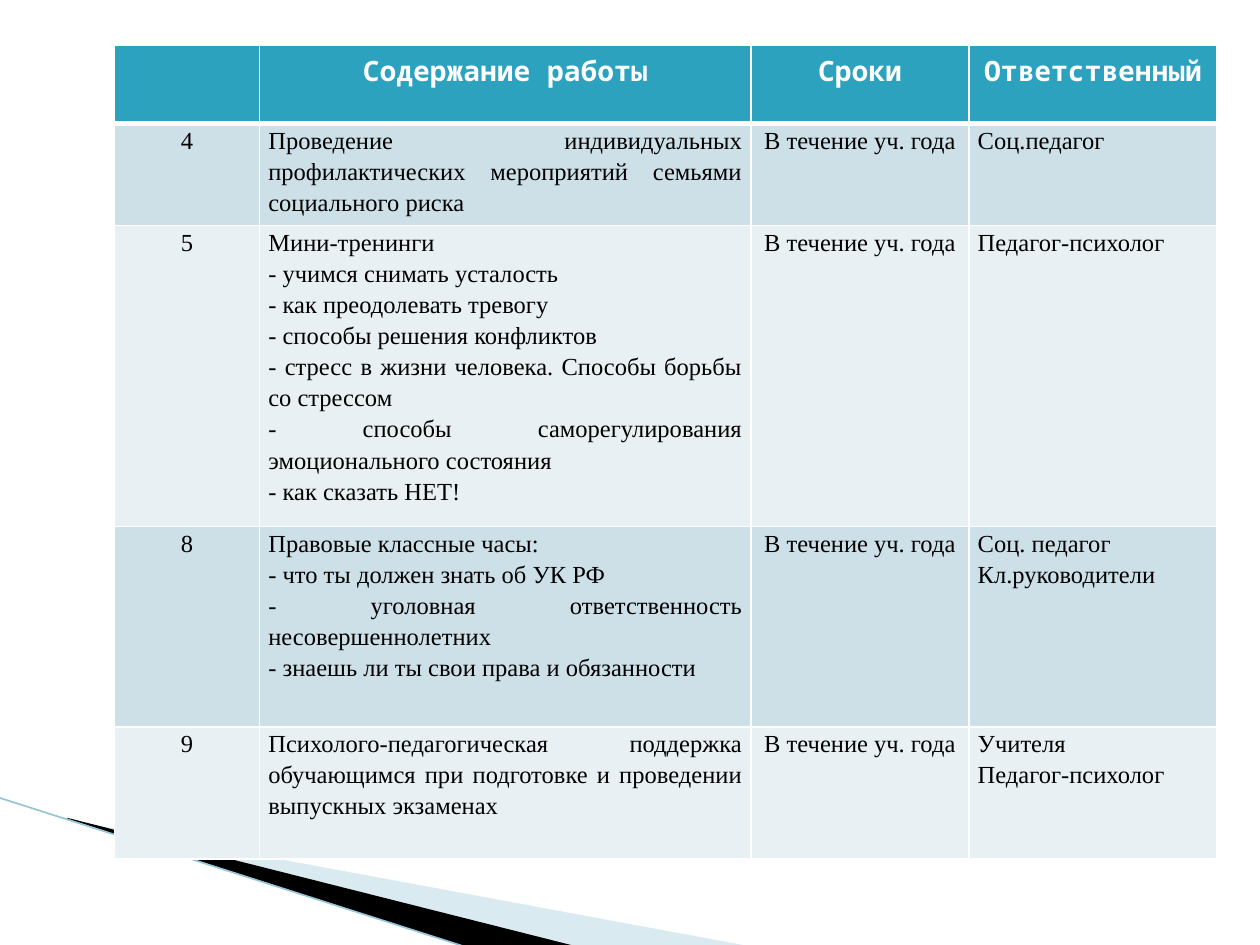
from dataclasses import dataclass

from lxml import etree
from pptx import Presentation
from pptx import util as u
from pptx.dml.color import RGBColor
from pptx.enum import shapes, text
from pptx.oxml import ns

WHITE = RGBColor(0xFF, 0xFF, 0xFF)
BLACK = RGBColor(0, 0, 0)
TEAL = RGBColor(0x2D, 0xA2, 0xBF)
BAND_DARK = RGBColor(0xCD, 0xE0, 0xE8)
BAND_LIGHT = RGBColor(0xE8, 0xF0, 0xF4)
WEDGE_BLUE = RGBColor(0xA0, 0xCB, 0xDC)
EDGE_BLUE = RGBColor(0x97, 0xC5, 0xD8)

CENTER = text.PP_ALIGN.CENTER
JUSTIFY = text.PP_ALIGN.JUSTIFY
LEFT = text.PP_ALIGN.LEFT


@dataclass(frozen=True)
class Wedge:
    points: tuple[tuple[float, float], ...]
    color: RGBColor
    opacity: int = 100


@dataclass(frozen=True)
class Activity:
    number: str
    content: tuple[str, ...]
    responsible: tuple[str, ...]
    height: float
    period: str = "В течение уч. года"


@dataclass(frozen=True)
class CellStyle:
    font: str
    size: int
    color: RGBColor
    bold: bool
    spacing: float
    bottom_border: int


HEADER_STYLE = CellStyle("Noto Sans Mono", 16, WHITE, True, 1.0, 3)
BODY_STYLE = CellStyle("Times New Roman", 14, BLACK, False, 1.15, 1)

WEDGES = (
    Wedge(((0.55, 6.51), (5.95, 7.51), (4.56, 7.51), (0.55, 6.5)), WEDGE_BLUE, 40),
    Wedge(((0.53, 6.49), (4.57, 7.51), (3.72, 7.52), (0.54, 6.5)), BLACK),
)

HEADERS = ("", "Содержание работы", "Сроки", "Ответственный")
HEADER_HEIGHT = 0.62
COLUMN_WIDTHS = (1.15, 3.9, 1.73, 1.97)
ALIGNMENTS = (CENTER, JUSTIFY, CENTER, LEFT)

ACTIVITIES = (
    Activity(
        "4",
        ("Проведение индивидуальных профилактических мероприятий семьями социального риска",),
        ("Соц.педагог",),
        0.81,
    ),
    Activity(
        "5",
        (
            "Мини-тренинги",
            "- учимся снимать усталость",
            "- как преодолевать тревогу",
            "- способы решения конфликтов",
            "- стресс в жизни человека. Способы борьбы со стрессом",
            "- способы саморегулирования эмоционального состояния",
            "- как сказать НЕТ!",
        ),
        ("Педагог-психолог",),
        2.39,
    ),
    Activity(
        "8",
        (
            "Правовые классные часы:",
            "- что ты должен знать об УК РФ",
            "- уголовная ответственность несовершеннолетних",
            "- знаешь ли ты свои права и обязанности",
        ),
        ("Соц. педагог", "Кл.руководители"),
        1.59,
    ),
    Activity(
        "9",
        ("Психолого-педагогическая поддержка обучающимся при подготовке и проведении выпускных экзаменах",),
        ("Учителя", "Педагог-психолог"),
        1.05,
    ),
)


def draw_wedge(page, wedge: Wedge) -> None:
    points = [(u.Inches(x), u.Inches(y)) for x, y in wedge.points]
    builder = page.shapes.build_freeform(*points[0])
    builder.add_line_segments(points[1:], close=True)
    shape = builder.convert_to_shape()
    shape.shadow.inherit = False
    shape.fill.solid()
    shape.fill.fore_color.rgb = wedge.color
    shape.line.fill.background()
    if wedge.opacity < 100:
        color = shape.fill._xPr.find(".//" + ns.qn("a:srgbClr"))
        etree.SubElement(color, ns.qn("a:alpha"), val=str(wedge.opacity * 1000))


def draw_edge(page) -> None:
    edge = page.shapes.add_connector(
        shapes.MSO_CONNECTOR.STRAIGHT,
        u.Inches(-0.01), u.Inches(6.33), u.Inches(3.71), u.Inches(7.52),
    )
    edge.line.color.rgb = EDGE_BLUE
    edge.line.width = u.Pt(0.95)
    etree.SubElement(edge._element.spPr, ns.qn("a:effectLst"))


def set_borders(cell, bottom: int) -> None:
    properties = cell._tc.get_or_add_tcPr()
    for side, width in (("L", 1), ("R", 1), ("T", 1), ("B", bottom)):
        line = etree.SubElement(properties, ns.qn(f"a:ln{side}"), w=str(u.Pt(width)))
        fill = etree.SubElement(line, ns.qn("a:solidFill"))
        etree.SubElement(fill, ns.qn("a:srgbClr"), val=str(WHITE))


def fill_cell(cell, lines: tuple[str, ...], align: text.PP_ALIGN,
              style: CellStyle, background: RGBColor) -> None:
    set_borders(cell, style.bottom_border)
    cell.fill.solid()
    cell.fill.fore_color.rgb = background
    frame = cell.text_frame
    for index, line in enumerate(lines):
        para = frame.add_paragraph() if index else frame.paragraphs[0]
        para.alignment = align
        para.line_spacing = style.spacing
        if not line:
            continue
        span = para.add_run()
        span.text = line
        span.font.name = style.font
        span.font.size = u.Pt(style.size)
        span.font.bold = style.bold
        span.font.color.rgb = style.color


def draw_plan(page) -> None:
    heights = (HEADER_HEIGHT, *(activity.height for activity in ACTIVITIES))
    table = page.shapes.add_table(
        len(heights), len(COLUMN_WIDTHS), u.Inches(0.91), u.Inches(0.36),
        u.Inches(sum(COLUMN_WIDTHS)), u.Inches(sum(heights)),
    ).table
    table.horz_banding = False
    for column, width in zip(table.columns, COLUMN_WIDTHS):
        column.width = u.Inches(width)
    for row, height in zip(table.rows, heights):
        row.height = u.Inches(height)
    for column, title in enumerate(HEADERS):
        fill_cell(table.cell(0, column), (title,), CENTER, HEADER_STYLE, TEAL)
    for row, activity in enumerate(ACTIVITIES, start=1):
        background = BAND_DARK if row % 2 else BAND_LIGHT
        values = ((activity.number,), activity.content, (activity.period,), activity.responsible)
        for column, (lines, align) in enumerate(zip(values, ALIGNMENTS)):
            cell = table.cell(row, column)
            cell.margin_left = cell.margin_right = u.Inches(0.07)
            cell.margin_top = cell.margin_bottom = 0
            fill_cell(cell, lines, align, BODY_STYLE, background)


def main() -> None:
    deck = Presentation()
    deck.slide_width, deck.slide_height = u.Inches(10), u.Inches(7.5)
    page = deck.slides.add_slide(deck.slide_layouts[6])
    for wedge in WEDGES:
        draw_wedge(page, wedge)
    draw_edge(page)
    draw_plan(page)
    deck.save("out.pptx")


if __name__ == "__main__":
    main()
